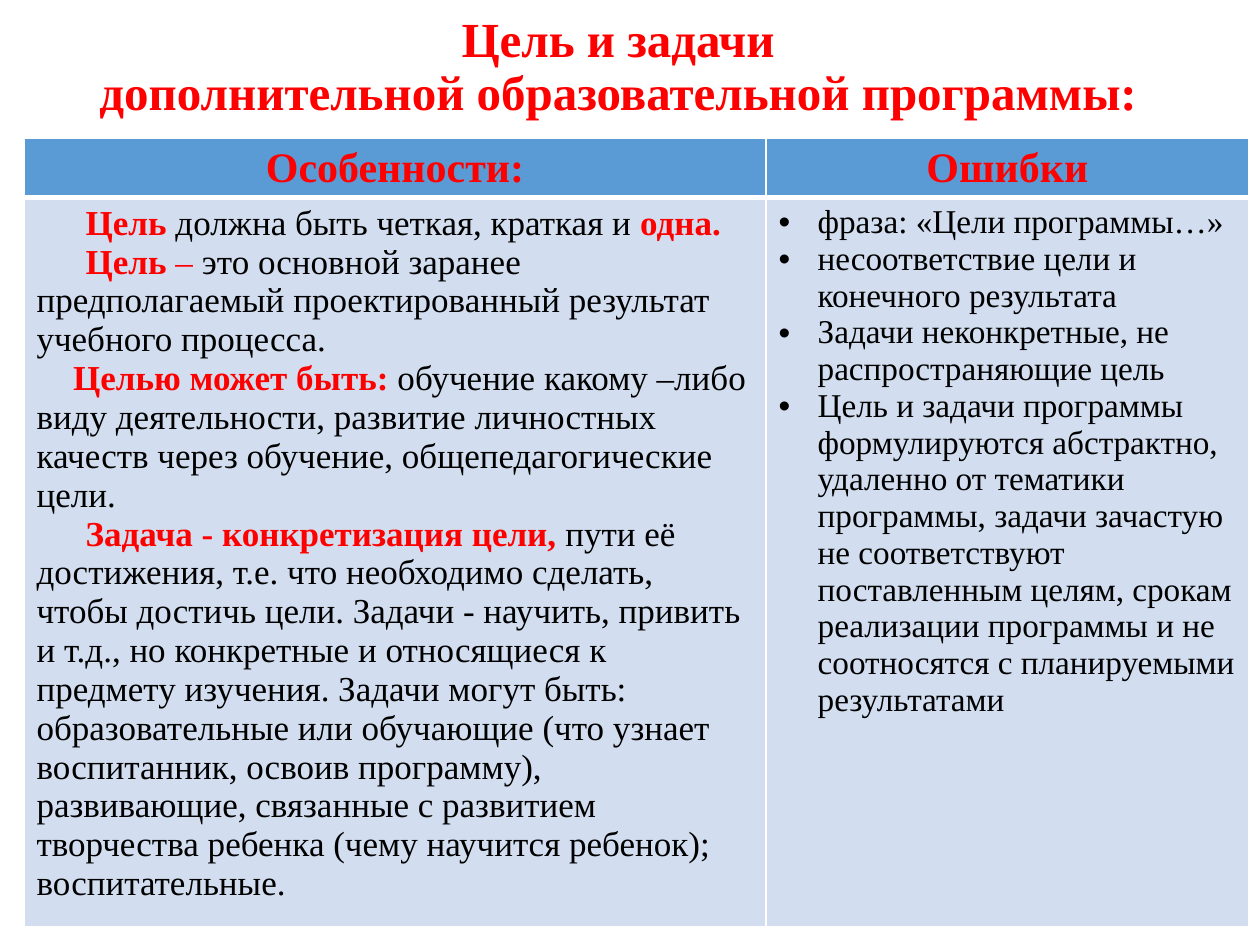
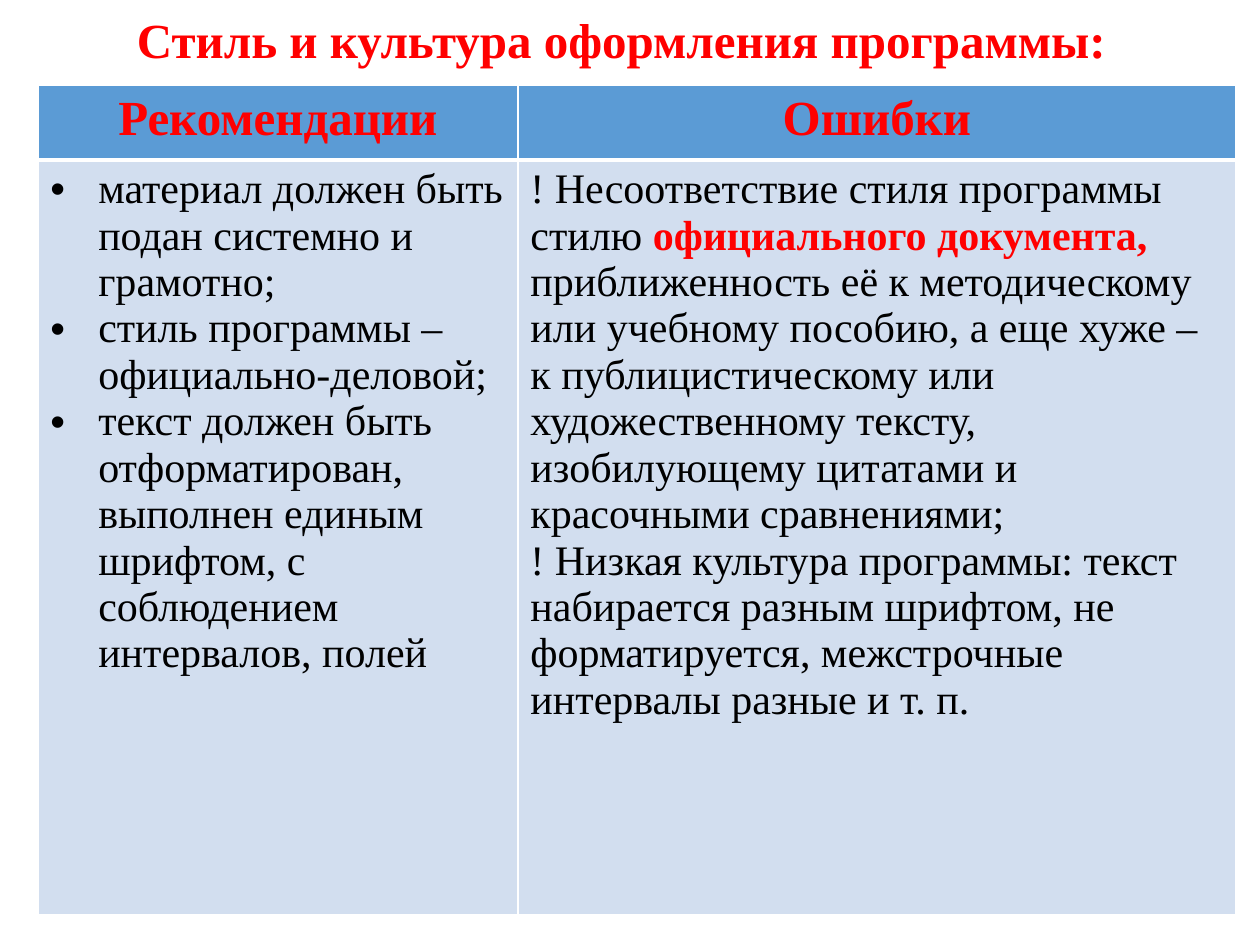
from lxml import etree
from pptx import Presentation
from pptx.dml.color import RGBColor
from pptx.enum.text import MSO_ANCHOR, MSO_AUTO_SIZE, PP_ALIGN
from pptx.oxml.ns import qn
from pptx.util import Inches, Pt

CENTER, LEFT = PP_ALIGN.CENTER, PP_ALIGN.LEFT
MIDDLE = MSO_ANCHOR.MIDDLE
NO_AUTOFIT = MSO_AUTO_SIZE.NONE

RED = RGBColor(0xFF, 0x00, 0x00)
BLACK = RGBColor(0x00, 0x00, 0x00)
WHITE = RGBColor(0xFF, 0xFF, 0xFF)
HEADER_BLUE = RGBColor(0x5B, 0x9B, 0xD5)
BODY_BLUE = RGBColor(0xD2, 0xDE, 0xEF)

FONT = "Times New Roman"
TITLE_SIZE = 28
TITLE_LAYOUT = 5
PLAIN = {"bold": False, "color": BLACK}
STRONG = {"bold": True, "color": RED}
ACCENT = {"bold": False, "color": RED}

# Each paragraph is a list of (text, style) runs.
# A column has a heading, a text size, a bullet indent and first-line indents.
SLIDES = [
    {
        "title": "Цель и задачи\vдополнительной образовательной программы:",
        "title_box": (0.19, 0.08, 9.43, 0.92),
        "table_at": (0.19, 1.1),
        "rows": (0.45, 5.79),
        "header_size": 24,
        "columns": [
            {
                "heading": "Особенности:", "width": 5.89, "size": 20,
                "bullet": 0, "first_line": (0.39, 0.39, 0.29, 0.39),
                "paragraphs": [
                    [("Цель", STRONG),
                     (" должна быть четкая, краткая и ", PLAIN),
                     ("одна.", STRONG)],
                    [("Цель", STRONG), (" – ", ACCENT),
                     ("это основной заранее предполагаемый проектированный "
                      "результат учебного процесса.", PLAIN)],
                    [("Целью может быть: ", STRONG),
                     ("обучение какому –либо виду деятельности, развитие "
                      "личностных качеств через обучение, "
                      "общепедагогические цели.", PLAIN)],
                    [("Задача - конкретизация цели, ", STRONG),
                     ("пути её достижения, т.е. что необходимо сделать, чтобы "
                      "достичь цели. Задачи - научить, привить и т.д., но "
                      "конкретные и относящиеся к предмету изучения. Задачи "
                      "могут быть: образовательные или обучающие (что узнает "
                      "воспитанник, освоив программу), развивающие, связанные "
                      "с развитием творчества ребенка (чему научится ребенок); "
                      "воспитательные.", PLAIN)],
                ],
            },
            {
                "heading": "Ошибки", "width": 3.83, "size": 19,
                "bullet": 0.31, "first_line": (),
                "paragraphs": [
                    [("фраза: «Цели программы…»", PLAIN)],
                    [("несоответствие цели и конечного результата", PLAIN)],
                    [("Задачи неконкретные, не распространяющие цель", PLAIN)],
                    [("Цель и задачи программы формулируются абстрактно, "
                      "удаленно от тематики программы, задачи зачастую не "
                      "соответствуют поставленным целям, срокам реализации "
                      "программы и не соотносятся с планируемыми "
                      "результатами", PLAIN)],
                ],
            },
        ],
    },
    {
        "title": "Стиль и культура оформления программы:",
        "title_box": (0.62, 0, 8.62, 0.68),
        "table_at": (0.3, 0.68),
        "rows": (0.59, 5.99),
        "header_size": 28,
        "columns": [
            {
                "heading": "Рекомендации", "width": 3.81, "size": 24,
                "bullet": 0.38, "first_line": (),
                "paragraphs": [
                    [("материал должен быть подан системно и грамотно;", PLAIN)],
                    [("стиль программы – официально-деловой;", PLAIN)],
                    [("текст должен быть отформатирован, выполнен единым "
                      "шрифтом, с соблюдением интервалов, полей", PLAIN)],
                ],
            },
            {
                "heading": "Ошибки", "width": 5.7, "size": 24,
                "bullet": 0, "first_line": (0, 0),
                "paragraphs": [
                    [("! Несоответствие стиля программы стилю ", PLAIN),
                     ("официального документа, ", STRONG),
                     ("приближенность её к методическому или учебному пособию, "
                      "а еще хуже – к публицистическому или художественному "
                      "тексту, изобилующему цитатами и красочными "
                      "сравнениями;", PLAIN)],
                    [("! Низкая культура программы: текст набирается разным "
                      "шрифтом, не форматируется, межстрочные интервалы разные "
                      "и т. п.", PLAIN)],
                ],
            },
        ],
    },
]


def write_paragraph(paragraph, runs, size, align):
    paragraph.alignment = align
    for text, style in runs:
        # A vertical tab marks a line break inside the run
        for number, line in enumerate(text.split("\v")):
            if number:
                paragraph.add_line_break()
            run = paragraph.add_run()
            run.text = line
            run.font.name = FONT
            run.font.size = Pt(size)
            run.font.bold = style["bold"]
            run.font.color.rgb = style["color"]


def style_cell(cell, fill, top, bottom):
    """Give a cell its fill and white borders; top and bottom are in points."""
    properties = cell._tc.get_or_add_tcPr()
    for side, width in {"L": 1, "R": 1, "T": top, "B": bottom}.items():
        line = etree.SubElement(properties, qn("a:ln" + side), w=str(Pt(width)))
        solid = etree.SubElement(line, qn("a:solidFill"))
        etree.SubElement(solid, qn("a:srgbClr"), val=str(WHITE))
    cell.fill.solid()
    cell.fill.fore_color.rgb = fill


presentation = Presentation()
presentation.slide_width = Inches(10)
presentation.slide_height = Inches(7.5)

for content in SLIDES:
    slide = presentation.slides.add_slide(
        presentation.slide_layouts[TITLE_LAYOUT])

    title = slide.shapes.title
    title.left, title.top, title.width, title.height = map(
        Inches, content["title_box"])
    title.text_frame.auto_size = NO_AUTOFIT
    title.text_frame.vertical_anchor = MIDDLE
    heading = title.text_frame.paragraphs[0]
    heading.line_spacing = 0.9
    write_paragraph(heading, [(content["title"], STRONG)], TITLE_SIZE, CENTER)

    columns = content["columns"]
    left, top = content["table_at"]
    width = sum(column["width"] for column in columns)
    table = slide.shapes.add_table(
        2, len(columns), Inches(left), Inches(top),
        Inches(width), Inches(sum(content["rows"]))).table
    for row, height in zip(table.rows, content["rows"]):
        row.height = Inches(height)

    for index, column in enumerate(columns):
        table.columns[index].width = Inches(column["width"])
        header, body = table.cell(0, index), table.cell(1, index)
        style_cell(header, HEADER_BLUE, top=1, bottom=3)
        style_cell(body, BODY_BLUE, top=3, bottom=1)
        write_paragraph(header.text_frame.paragraphs[0],
                        [(column["heading"], STRONG)],
                        content["header_size"], CENTER)

        frame = body.text_frame
        for number, runs in enumerate(column["paragraphs"]):
            paragraph = frame.add_paragraph() if number else frame.paragraphs[0]
            properties = paragraph._p.get_or_add_pPr()
            bullet = column["bullet"]
            indent = -bullet if bullet else column["first_line"][number]
            properties.set("marL", str(Inches(bullet)))
            properties.set("indent", str(Inches(indent)))
            if bullet:
                etree.SubElement(properties, qn("a:buFont"), typeface="Arial")
                etree.SubElement(properties, qn("a:buChar"), char="•")
            write_paragraph(paragraph, runs, column["size"], LEFT)

presentation.save("out.pptx")
